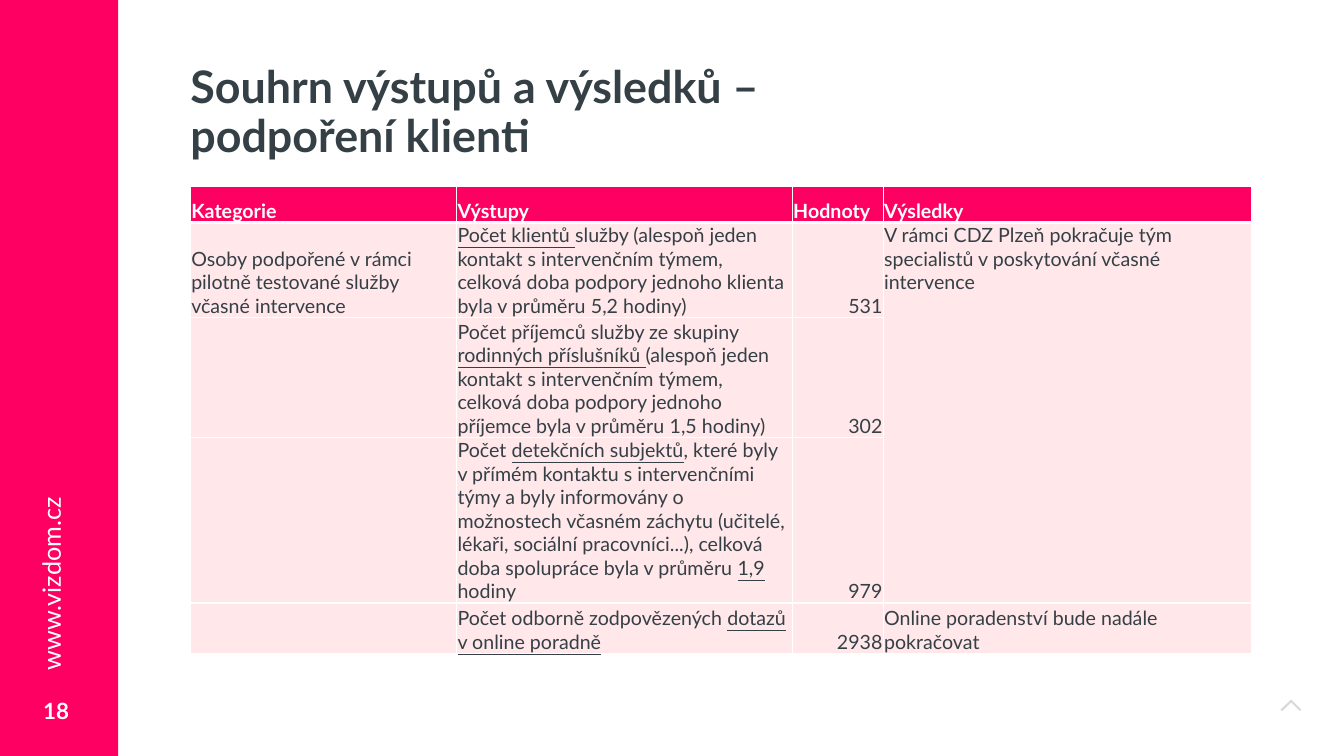
"""Build the slide that sums up outputs and results for supported clients."""
import pptx
import pptx.util
import pptx.dml.color
import pptx.enum.shapes
import pptx.enum.text
import pptx.oxml
import pptx.oxml.ns
from dataclasses import dataclass

Cm, Pt = pptx.util.Cm, pptx.util.Pt
Color = pptx.dml.color.RGBColor.from_string
Anchor = pptx.enum.text.MSO_ANCHOR
Align = pptx.enum.text.PP_ALIGN


@dataclass
class Theme:
    font: str = "Lato"
    pink: str = "FE0061"
    pale: str = "FFE7EA"
    dark: str = "344046"
    white: str = "FFFFFF"
    title: int = 32
    link: int = 18
    page: int = 16
    body: int = 14


THEME = Theme()
TITLE = ["Souhrn výstupů a výsledků –", "podpoření klienti"]
LINK = "www.vizdom.cz"
PAGE = "18"
MARK = "_"
ROWS = [
    ("Kategorie", "Výstupy", "Hodnoty", "Výsledky"),
    ("Osoby podpořené v rámci pilotně testované služby včasné intervence",
     "_Počet klientů _služby (alespoň jeden kontakt s intervenčním týmem, "
     "celková doba podpory jednoho klienta byla v průměru _5,2_ hodiny)",
     "531",
     "V rámci CDZ Plzeň pokračuje tým specialistů v poskytování včasné intervence"),
    ("",
     "Počet příjemců služby ze skupiny _rodinných příslušníků _(alespoň jeden "
     "kontakt s intervenčním týmem, celková doba podpory jednoho příjemce "
     "byla v průměru _1,5_ hodiny)",
     "302", ""),
    ("",
     "Počet _detekčních subjektů_, které byly v přímém kontaktu s intervenčními "
     "týmy a byly informovány o možnostech včasném záchytu (učitelé, lékaři, "
     "sociální pracovníci...), celková doba spolupráce byla v průměru _1,9_ hodiny",
     "979", ""),
    ("", "Počet odborně zodpovězených _dotazů v online poradně_", "2938",
     "Online poradenství bude nadále pokračovat"),
]
WIDTHS = [6.71, 8.46, 2.29, 9.29]
HEIGHTS = [0.91, 2.01, 3.02, 3.76, 1.27]
LEFT, TOP = 4.8, 4.7
CARET = [(32.54, 17.63), (32.79, 17.88), (32.76, 17.92),
         (32.54, 17.7), (32.31, 17.92), (32.27, 17.88)]


def add_run(para, text, size, color, bold=False, under=False):
    run = para.add_run()
    run.text = text
    font = run.font
    font.name, font.size, font.bold = THEME.font, Pt(size), bold
    font.underline = under
    font.color.rgb = Color(color)


def add_box(slide, place, lines, size, color, bold=False, anchor=Anchor.TOP):
    box = slide.shapes.add_textbox(*map(Cm, place))
    frame = box.text_frame
    frame.word_wrap = True
    frame.vertical_anchor = anchor
    para = frame.paragraphs[0]
    for num, line in enumerate(lines):
        if num:
            para.add_line_break()
        add_run(para, line, size, color, bold)
    return box


def paint(shape, color):
    shape.shadow.inherit = False
    shape.fill.solid()
    shape.fill.fore_color.rgb = Color(color)
    shape.line.fill.background()


def add_caret(slide):
    unit = Cm(1) / 100
    points = [(round(x * 100), round(y * 100)) for x, y in CARET]
    pen = slide.shapes.build_freeform(*points[0], scale=unit)
    pen.add_line_segments(points[1:], close=True)
    caret = pen.convert_to_shape()
    paint(caret, THEME.dark)
    fill = caret.fill.fore_color._xFill[0]
    fill.append(pptx.oxml.parse_xml(
        f'<a:alpha {pptx.oxml.ns.nsdecls("a")} val="20000"/>'))


def set_edges(cell, row):
    props = cell._tc.get_or_add_tcPr()
    thick = {"T": 3 if row == 1 else 1, "B": 3 if row == 0 else 1}
    for spot, side in enumerate("LRTB"):
        props.insert(spot, pptx.oxml.parse_xml(
            f'<a:ln{side} {pptx.oxml.ns.nsdecls("a")} w="{Pt(thick.get(side, 1))}">'
            f'<a:solidFill><a:srgbClr val="{THEME.white}"/></a:solidFill></a:ln{side}>'))


def fill_cell(cell, text, row, col):
    head = row == 0
    cell.fill.solid()
    cell.fill.fore_color.rgb = Color(THEME.pink if head else THEME.pale)
    set_edges(cell, row)
    cell.margin_left = cell.margin_right = cell.margin_top = Cm(0.02)
    cell.margin_bottom = 0
    cell.vertical_anchor = Anchor.TOP if (row, col) == (1, 3) else Anchor.BOTTOM
    para = cell.text_frame.paragraphs[0]
    if col == 2 and not head:
        para.alignment = Align.RIGHT
    para.font.size = Pt(THEME.body)
    for num, part in enumerate(text.split(MARK)):
        if part:
            add_run(para, part, THEME.body, THEME.white if head else THEME.dark,
                    head, num % 2 == 1)


def add_grid(slide):
    table = slide.shapes.add_table(
        len(ROWS), len(WIDTHS), Cm(LEFT), Cm(TOP),
        Cm(sum(WIDTHS)), Cm(sum(HEIGHTS))).table
    table.horz_banding = False
    for col, width in zip(table.columns, WIDTHS):
        col.width = Cm(width)
    for line, height in zip(table.rows, HEIGHTS):
        line.height = Cm(height)
    for row, texts in enumerate(ROWS):
        for col, text in enumerate(texts):
            fill_cell(table.cell(row, col), text, row, col)
    table.cell(1, 3).merge(table.cell(3, 3))


def main():
    deck = pptx.Presentation()
    deck.slide_width, deck.slide_height = Cm(33.87), Cm(19.05)
    slide = deck.slides.add_slide(deck.slide_layouts[6])
    add_caret(slide)
    band = slide.shapes.add_shape(
        pptx.enum.shapes.MSO_SHAPE.RECTANGLE, 0, 0, Cm(2.98), Cm(19.28))
    paint(band, THEME.pink)
    add_box(slide, (0.84, 17.15, 1.27, 1.52), [PAGE], THEME.page, THEME.white,
            True, Anchor.MIDDLE)
    link = add_box(slide, (-1.73, 13.59, 6.05, 1.04), [LINK], THEME.link, THEME.white)
    link.rotation = 270
    title = add_box(slide, (LEFT, 1.02, sum(WIDTHS), 3.68), TITLE, THEME.title,
                    THEME.dark, True, Anchor.MIDDLE)
    title.text_frame.margin_left = title.text_frame.margin_right = 0
    title.text_frame.paragraphs[0].line_spacing = 0.9
    add_grid(slide)
    deck.save("out.pptx")


if __name__ == "__main__":
    main()
